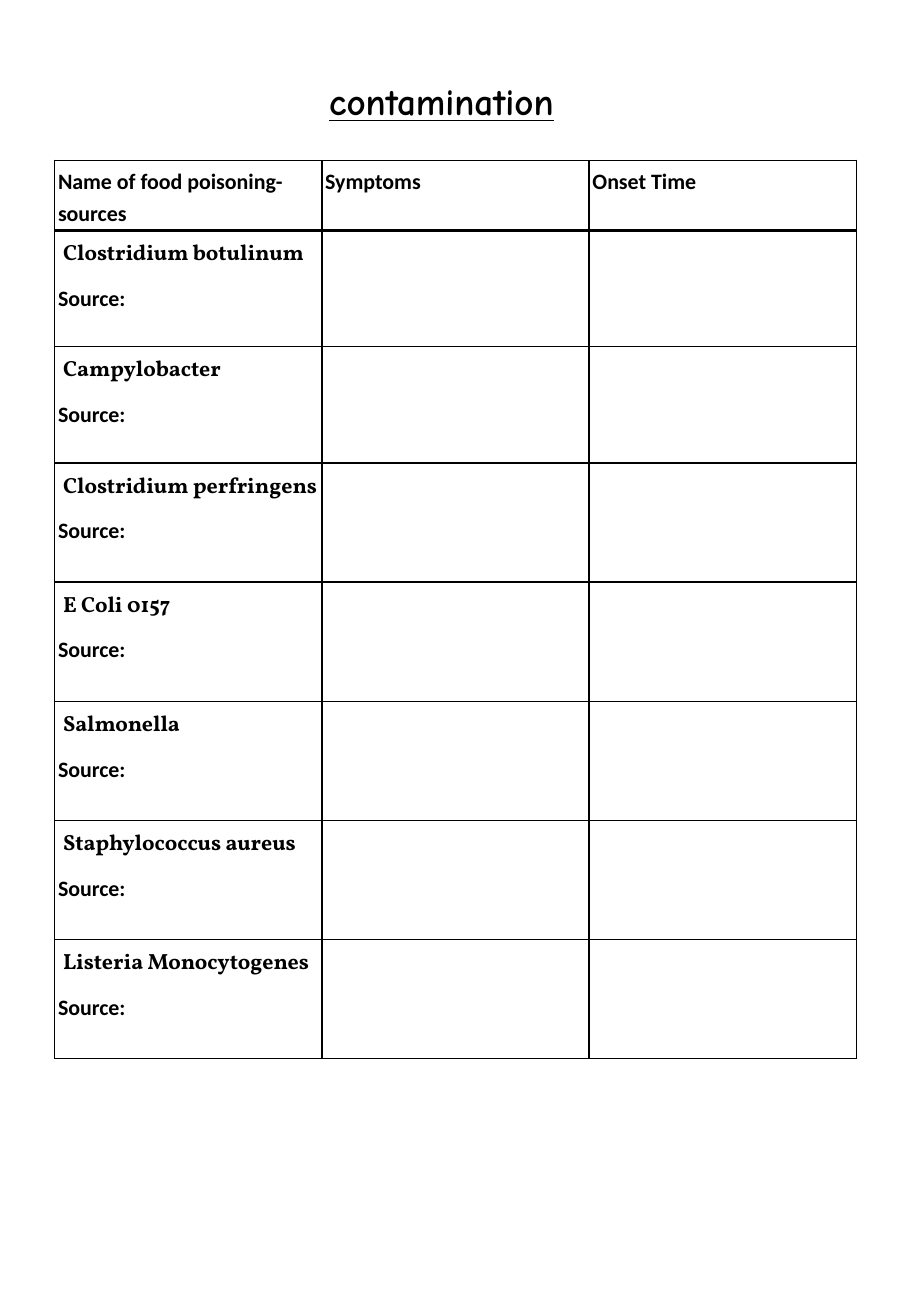
from lxml import etree
from pptx import Presentation
from pptx.dml import color
from pptx.enum import text
from pptx.oxml import ns
from pptx.util import Pt

INK = "000000"
HEADS = ["Name of food poisoning- sources", "Symptoms", "Onset Time"]
GERMS = ["Clostridium botulinum", "Campylobacter", "Clostridium perfringens",
         "E Coli 0157", "Salmonella", "Staphylococcus aureus",
         "Listeria Monocytogenes"]


def tint(code):
    return color.RGBColor.from_string(code)


def write(para, words, font="Calibri", size=13, line=False, align=None,
          lead=None, after=None, indent=0):
    run = para.add_run()
    run.text = words
    face = run.font
    face.name, face.size, face.bold = font, Pt(size), True
    face.underline = line
    face.color.rgb = tint(INK)
    para.alignment = align
    para.line_spacing = lead
    if after is not None:
        para.space_after = Pt(after)
    if indent:
        para._p.get_or_add_pPr().set("marL", str(Pt(indent)))


def edge(cell, top=1, low=1):
    # Borders must come before the fill in the cell properties
    props = cell._tc.get_or_add_tcPr()
    sides = {"lnL": 1, "lnR": 1, "lnT": top, "lnB": low}
    for spot, (side, width) in enumerate(sides.items()):
        rule = etree.Element(ns.qn("a:" + side), w=str(Pt(width)))
        fill = etree.SubElement(rule, ns.qn("a:solidFill"))
        etree.SubElement(fill, ns.qn("a:srgbClr"), val=INK)
        props.insert(spot, rule)


def title(slide, left, top, width, height):
    frame = slide.shapes.add_textbox(
        Pt(left), Pt(top), Pt(width), Pt(height)).text_frame
    frame.word_wrap = True
    write(frame.paragraphs[0], "contamination", font="Comic Neue", size=22,
          line=True, align=text.PP_ALIGN.CENTER)


def chart(slide, left, top, width, highs):
    grid = slide.shapes.add_table(
        len(highs), len(HEADS), Pt(left), Pt(top), Pt(width),
        Pt(sum(highs))).table
    grid.first_row = grid.horz_banding = False
    for col in grid.columns:
        col.width = Pt(width / len(HEADS))

    # Plain ruled cells, with a heavy line below the heads
    for pos, high in enumerate(highs):
        grid.rows[pos].height = Pt(high)
        for cell in grid.rows[pos].cells:
            cell.fill.background()
            cell.margin_left = cell.margin_right = Pt(2)
            cell.margin_top = cell.margin_bottom = Pt(2)
            edge(cell, top=2.25 if pos == 1 else 1,
                 low=2.25 if pos == 0 else 1)

    # Heads, then one row for each germ
    body = {"lead": 1.19, "after": 6}
    for cell, head in zip(grid.rows[0].cells, HEADS):
        write(cell.text_frame.paragraphs[0], head, **body)
    for pos, germ in enumerate(GERMS, 1):
        frame = grid.cell(pos, 0).text_frame
        write(frame.paragraphs[0], germ, font="Vollkorn", indent=3, **body)
        write(frame.add_paragraph(), "Source:", **body)


def main():
    deck = Presentation()
    deck.slide_width, deck.slide_height = Pt(540), Pt(780)
    slide = deck.slides.add_slide(deck.slide_layouts[6])
    title(slide, 18.7, 43.2, 486, 41)
    chart(slide, 32.4, 95, 475.2, [41.5] + [69] * 2 + [70.6] * 5)
    deck.save("out.pptx")


if __name__ == "__main__":
    main()
